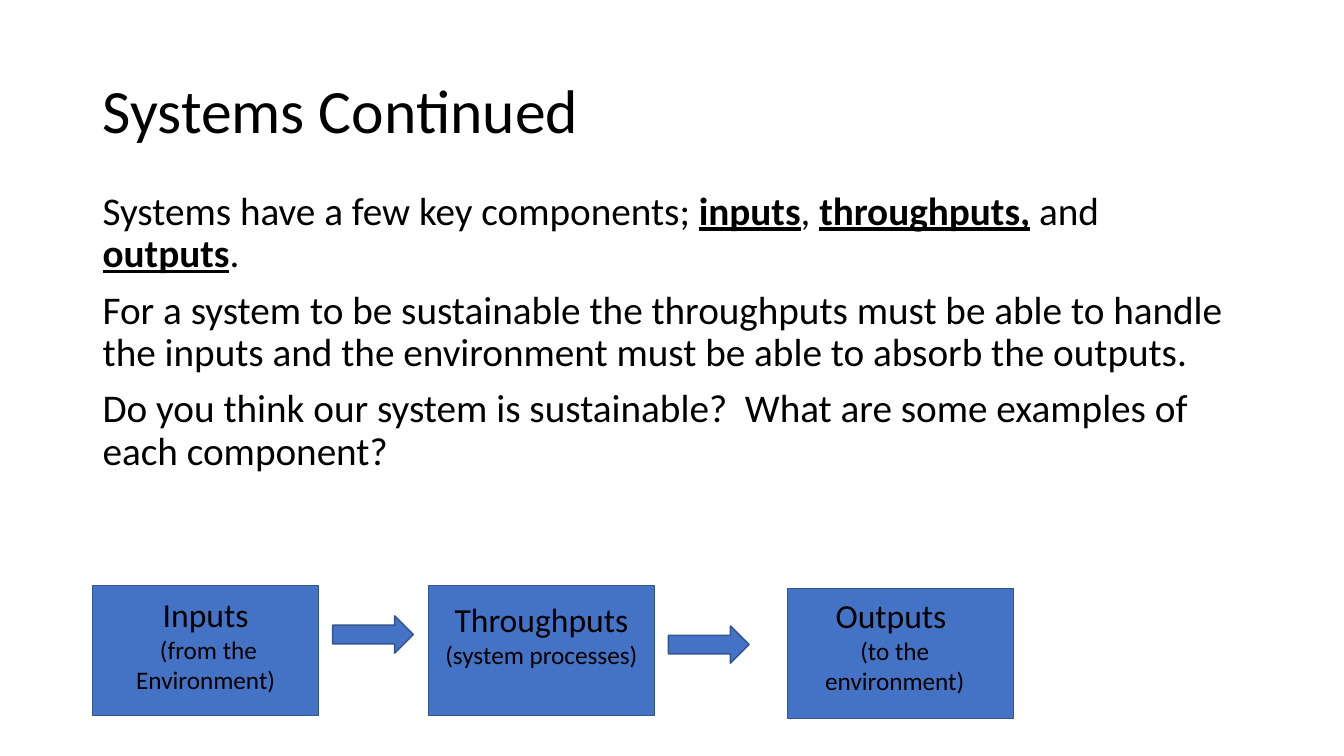
from pptx import Presentation
from pptx.dml.color import RGBColor
from pptx.enum.shapes import MSO_SHAPE
from pptx.enum.text import MSO_ANCHOR, MSO_AUTO_SIZE, PP_ALIGN
from pptx.util import Inches, Pt

RECT, ARROW = MSO_SHAPE.RECTANGLE, MSO_SHAPE.RIGHT_ARROW
LEFT, CENTER = PP_ALIGN.LEFT, PP_ALIGN.CENTER
TOP, MIDDLE = MSO_ANCHOR.TOP, MSO_ANCHOR.MIDDLE
BLACK = RGBColor(0x00, 0x00, 0x00)
BLUE = RGBColor(0x44, 0x72, 0xC4)
DARK_BLUE = RGBColor(0x32, 0x54, 0x91)
FONT = "Calibri"

# Content: a paragraph is a list of (text, size, key term) runs
TITLE = [[("Systems Continued", 44, False)]]
BODY = [
    [("Systems have a few key components; ", 28, False), ("inputs", 28, True),
     (", ", 28, False), ("throughputs,", 28, True), (" and ", 28, False),
     ("outputs", 28, True), (".", 28, False)],
    [("For a system to be sustainable the throughputs must be able to handle "
      "the inputs and the environment must be able to absorb the outputs.", 28, False)],
    [("Do you think our system is sustainable?  What are some examples of "
      "each component?", 28, False)],
]
# Stages: box left, box top, label top, label width, label height, paragraphs
STAGES = [
    (0.92, 5.81, 5.84, 2.24, 1.11,
     [[("Inputs", 24, False)], [(" (from the Environment)", 18, False)]]),
    (4.25, 5.81, 5.89, 2.24, 0.81,
     [[("Throughputs", 24, False), (" (system processes)", 18, False)]]),
    (7.81, 5.84, 5.85, 2.13, 1.11,
     [[("Outputs ", 24, False)], [("(to the environment)", 18, False)]]),
]
BOX_W, BOX_H = 2.24, 1.29
ARROW_W, ARROW_H, ARROW_GAP = 0.8, 0.37, 0.14
ARROW_TOPS = [6.11, 6.21]


def write(shape, paragraphs, align=LEFT, anchor=TOP, line=1.0, before=0):
    tf = shape.text_frame
    tf.word_wrap = True
    tf.auto_size = MSO_AUTO_SIZE.NONE
    tf.vertical_anchor = anchor
    for i, runs in enumerate(paragraphs):
        p = tf.paragraphs[0] if i == 0 else tf.add_paragraph()
        p.alignment = align
        p.line_spacing = line
        p.space_before = Pt(before)
        for text, size, key in runs:
            r = p.add_run()
            r.text = text
            r.font.name, r.font.size = FONT, Pt(size)
            r.font.bold = r.font.underline = key
            r.font.color.rgb = BLACK


def add_block(s, kind, *box):
    sp = s.shapes.add_shape(kind, *map(Inches, box))
    sp.shadow.inherit = False
    sp.fill.solid()
    sp.fill.fore_color.rgb = BLUE
    sp.line.color.rgb = DARK_BLUE
    sp.line.width = Pt(1)


def main():
    prs = Presentation()
    prs.slide_width, prs.slide_height = Inches(13.33), Inches(7.5)
    s = prs.slides.add_slide(prs.slide_layouts[5])

    # Title and body text
    title = s.shapes.title
    title.left, title.top = Inches(0.92), Inches(0.4)
    title.width, title.height = Inches(11.5), Inches(1.45)
    write(title, TITLE, anchor=MIDDLE, line=0.9)
    body = s.shapes.add_textbox(*map(Inches, (0.92, 1.85, 11.5, 5.11)))
    write(body, BODY, line=0.9, before=10)

    # Stages of the system, each with its label
    for x, y, label_y, label_w, label_h, label in STAGES:
        add_block(s, RECT, x, y, BOX_W, BOX_H)
        tb = s.shapes.add_textbox(*map(Inches, (x, label_y, label_w, label_h)))
        write(tb, label, align=CENTER)

    # An arrow after each stage but the last
    for stage, y in zip(STAGES, ARROW_TOPS):
        add_block(s, ARROW, stage[0] + BOX_W + ARROW_GAP, y, ARROW_W, ARROW_H)

    prs.save("out.pptx")


if __name__ == "__main__":
    main()
